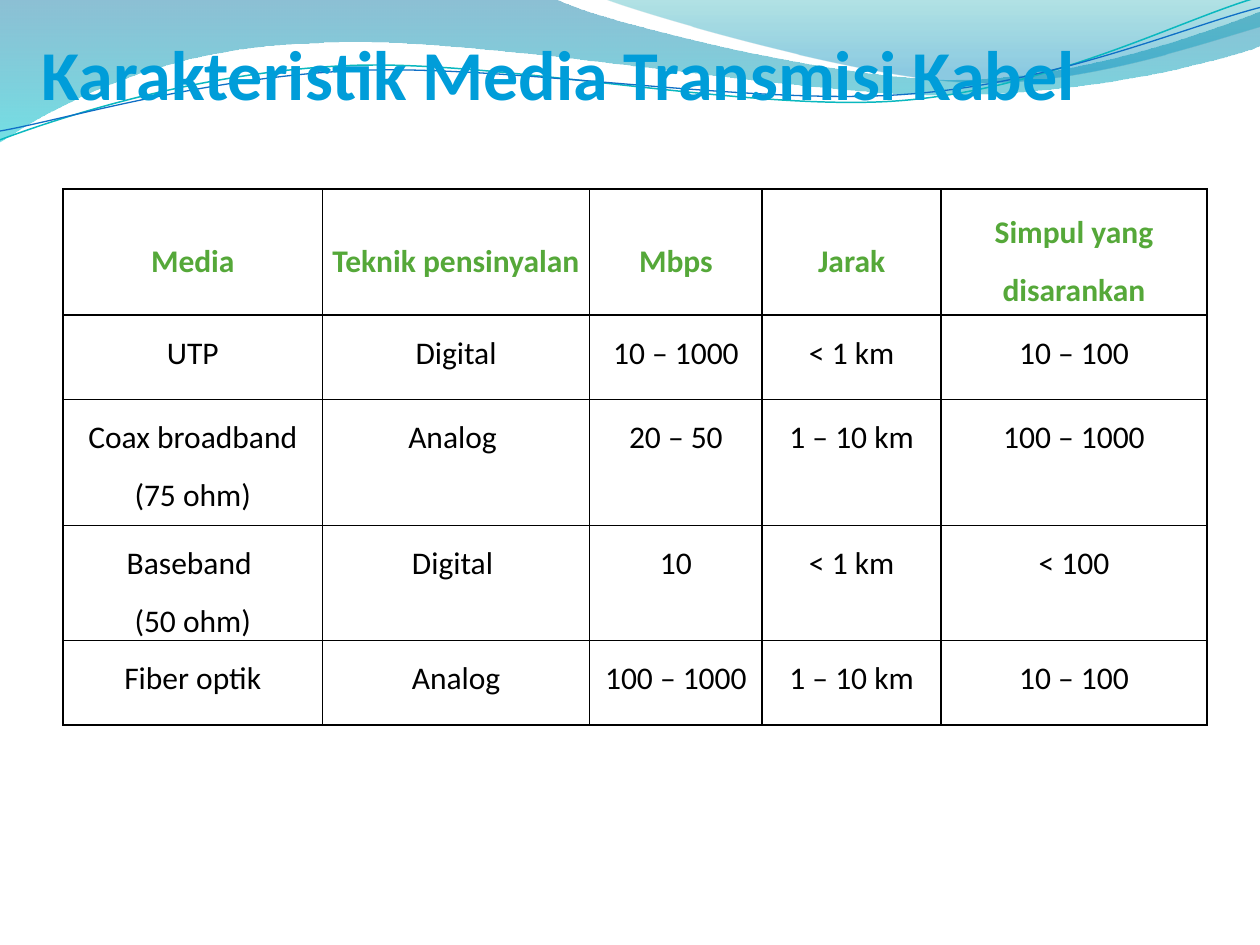
from math import cos, radians, sin

from lxml import etree
from pptx import Presentation
from pptx.dml.color import RGBColor
from pptx.enum.text import MSO_ANCHOR, MSO_AUTO_SIZE, PP_ALIGN
from pptx.oxml.ns import qn
from pptx.util import Inches, Pt

LEFT, CENTER = PP_ALIGN.LEFT, PP_ALIGN.CENTER
TOP, MIDDLE, BOTTOM = MSO_ANCHOR.TOP, MSO_ANCHOR.MIDDLE, MSO_ANCHOR.BOTTOM
NO_FIT = MSO_AUTO_SIZE.NONE

FONT = "Calibri"
BLACK = RGBColor(0x00, 0x00, 0x00)
SKY = RGBColor(0x00, 0x9D, 0xD9)
GREEN = RGBColor(0x55, 0xA8, 0x39)
DEEP = RGBColor(0x00, 0x74, 0xA1)
AQUA = RGBColor(0x00, 0xC6, 0xCF)
TEAL = RGBColor(0x00, 0xA1, 0xA9)
BLUE = RGBColor(0x00, 0x8B, 0xBF)
CYAN = RGBColor(0x0A, 0xB8, 0xBF)
NAVY = RGBColor(0x0F, 0x6F, 0xC6)

# A pair is a corner; six numbers are a Bezier curve.
# Gradient stops hold position, colour and opacity in percent.
BANDS = [
    ([(0, 0), (4.4, -0.01), (4.76, 0.17, 6.64, 0.63, 7.58, 0.63),
      (8.53, 0.63, 9.58, 0.26, 10, 0.09), (10.01, 0.36),
      (9.83, 0.44, 8.7, 0.76, 7.46, 0.75), (6.22, 0.75, 3.82, 0.28, 2.57, 0.34),
      (1.29, 0.36, 0.46, 0.83, -0.01, 1.13), (0, 0)],
     [(0, DEEP, 45), (1, AQUA, 55)]),
    ([(4.79, -0.01), (5.09, 0.11, 6.82, 0.62, 7.69, 0.65),
      (8.56, 0.69, 9.61, 0.32, 10, 0.21), (10, 0), (4.79, -0.01)],
     [(0, TEAL, 30), (0.8, BLUE, 45)]),
]
# Strands are tilted about the given centre.
TILT = -2.7
STRANDS = [
    ([(0, 1.11), (0.48, 0.93, 1.58, 0.57, 2.77, 0.52),
      (3.95, 0.47, 5.93, 0.89, 7.13, 0.8), (8.33, 0.71, 9.38, 0.15, 9.98, -0.02)],
     (4.99, 0.58), CYAN, 0.85),
    ([(0, 1.04), (0.47, 0.96, 1.64, 0.61, 2.83, 0.56),
      (4.03, 0.51, 5.97, 0.84, 7.17, 0.75), (8.36, 0.67, 9.41, 0.21, 10, 0.06)],
     (5, 0.59), NAVY, 0.75),
]

COLS = [2.06, 2.12, 1.37, 1.42, 2.11]
ROWS = [1, 0.67, 1, 0.67, 0.67]
CELLS = [
    ["Media", "Teknik pensinyalan", "Mbps", "Jarak", "Simpul yang disarankan"],
    ["UTP", "Digital", "10 – 1000", "< 1 km", "10 – 100"],
    ["Coax broadband (75 ohm)", "Analog ", "20 – 50", "1 – 10 km", "100 – 1000"],
    ["Baseband \n(50 ohm)", "Digital ", "10", "< 1 km", "< 100"],
    ["Fiber optik", "Analog", "100 – 1000", "1 – 10 km", "10 – 100"],
]


def level(steps, center):
    """Take the tilt out of the steps, so that the shape can carry it."""
    turn, (mid, high) = radians(-TILT), center

    def spin(x, y):
        x, y = x - mid, y - high
        return (mid + x * cos(turn) - y * sin(turn),
                high + x * sin(turn) + y * cos(turn))

    return [sum((spin(*step[i:i + 2]) for i in range(0, len(step), 2)), ())
            for step in steps]


def add_path(slide, left, top, steps, close):
    """Draw the steps as lines, then merge each three lines of a curve."""
    points = [(left + Inches(step[i]), top + Inches(step[i + 1]))
              for step in steps for i in range(0, len(step), 2)]
    pen = slide.shapes.build_freeform(*points[0])
    pen.add_line_segments(points[1:], close=close)
    shape = pen.convert_to_shape()
    shape.shadow.inherit = False
    lines = iter(list(shape.element.iter(qn("a:lnTo"))))
    for step in steps[1:]:
        first = next(lines)
        if len(step) == 2:
            continue
        curve = etree.Element(qn("a:cubicBezTo"))
        first.addprevious(curve)
        for line in (first, next(lines), next(lines)):
            curve.append(line[0])
            line.getparent().remove(line)
    return shape


def add_waves(slide, left, top):
    for steps, stops in BANDS:
        band = add_path(slide, left, top, steps, True)
        band.line.fill.background()
        band.fill.gradient()
        band.fill.gradient_angle = 270
        for stop, (place, color, alpha) in zip(band.fill.gradient_stops, stops):
            stop.position = place
            stop.color.rgb = color
        nodes = band.element.iter(qn("a:srgbClr"))
        for node, (place, color, alpha) in zip(nodes, stops):
            etree.SubElement(node, qn("a:alpha"), val=str(alpha * 1000))
    for steps, center, color, width in STRANDS:
        strand = add_path(slide, left, top, level(steps, center), False)
        strand.rotation = TILT
        strand.fill.background()
        strand.line.color.rgb = color
        strand.line.width = Pt(width)


def add_run(para, text, size, color, bold):
    run = para.add_run()
    run.text = text
    run.font.name = FONT
    run.font.size = Pt(size)
    run.font.color.rgb = color
    run.font.bold = bold


def set_title(slide, text, left, top, width, height):
    title = slide.shapes.title
    title.left, title.top, title.width, title.height = left, top, width, height
    frame = title.text_frame
    frame.auto_size = NO_FIT
    frame.word_wrap = True
    frame.vertical_anchor = BOTTOM
    frame.margin_left = frame.margin_right = frame.margin_bottom = 0
    frame.margin_top = Inches(0.05)
    para = frame.paragraphs[0]
    para.alignment = LEFT
    add_run(para, text, 40, SKY, True)
    title.element.getparent().append(title.element)  # in front of the waves


def add_border(cell):
    props = cell._tc.get_or_add_tcPr()
    for i, side in enumerate(("a:lnL", "a:lnR", "a:lnT", "a:lnB")):
        line = etree.Element(qn(side), w=str(Pt(1)))
        fill = etree.SubElement(line, qn("a:solidFill"))
        etree.SubElement(fill, qn("a:srgbClr"), val=str(BLACK))
        props.insert(i, line)


def fill_cell(cell, text, head):
    cell.fill.background()
    add_border(cell)
    cell.vertical_anchor = MIDDLE if head else TOP
    cell.margin_left = cell.margin_right = Inches(0.07)
    cell.margin_top = cell.margin_bottom = 0
    frame = cell.text_frame
    for i, line in enumerate(text.split("\n")):
        para = frame.add_paragraph() if i else frame.paragraphs[0]
        para.alignment = CENTER
        para.line_spacing = 1.5
        add_run(para, line, 18, GREEN if head else BLACK, head)


def add_media(slide, left, top):
    """Add the table of cable media."""
    table = slide.shapes.add_table(len(ROWS), len(COLS), left, top,
                                   Inches(sum(COLS)), Inches(sum(ROWS))).table
    table.horz_banding = False
    for col, width in zip(table.columns, COLS):
        col.width = Inches(width)
    for r, (row, height) in enumerate(zip(table.rows, ROWS)):
        row.height = Inches(height)
        for cell, text in zip(row.cells, CELLS[r]):
            fill_cell(cell, text, r == 0)


def main():
    deck = Presentation()
    deck.slide_width, deck.slide_height = Inches(10), Inches(7.5)
    slide = deck.slides.add_slide(deck.slide_layouts[5])
    add_waves(slide, 0, 0)
    set_title(slide, "Karakteristik Media Transmisi Kabel",
              Inches(0.33), Inches(0.1), Inches(9.33), Inches(0.81))
    add_media(slide, Inches(0.5), Inches(1.5))
    deck.save("out.pptx")


if __name__ == "__main__":
    main()
